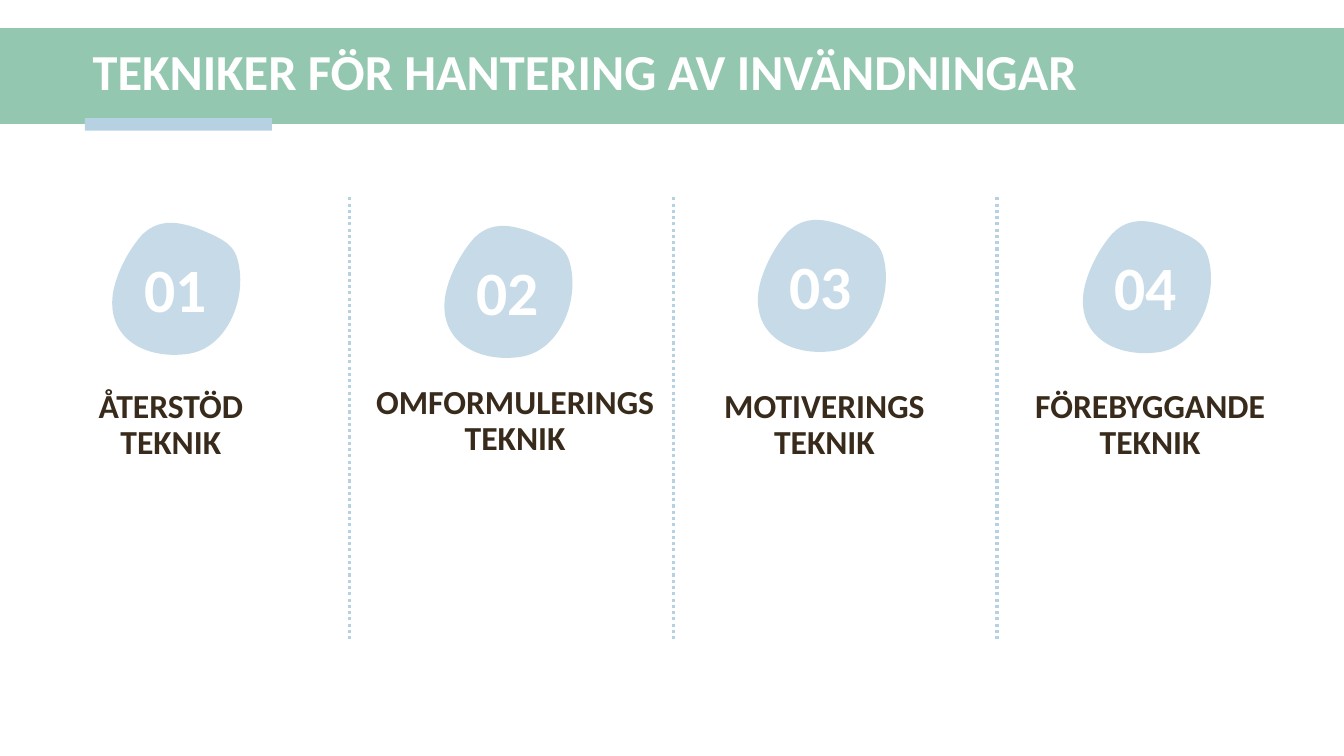
from dataclasses import dataclass

from lxml import etree
from pptx import Presentation
from pptx.dml.color import RGBColor
from pptx.enum.dml import MSO_LINE
from pptx.enum.shapes import MSO_CONNECTOR, MSO_SHAPE
from pptx.enum.text import MSO_ANCHOR, MSO_AUTO_SIZE, PP_ALIGN
from pptx.oxml.ns import qn
from pptx.util import Pt

RECTANGLE = MSO_SHAPE.RECTANGLE
STRAIGHT = MSO_CONNECTOR.STRAIGHT
DOTTED = MSO_LINE.ROUND_DOT
MIDDLE = MSO_ANCHOR.MIDDLE
NO_AUTOFIT = MSO_AUTO_SIZE.NONE
LEFT = PP_ALIGN.LEFT
CENTER = PP_ALIGN.CENTER


@dataclass(frozen=True)
class Theme:
    font: str = "Calibri"
    green: RGBColor = RGBColor(0x94, 0xC7, 0xB0)
    blue: RGBColor = RGBColor(0xB6, 0xD1, 0xE1)
    brown: RGBColor = RGBColor(0x38, 0x2B, 0x1B)
    white: RGBColor = RGBColor(0xFF, 0xFF, 0xFF)
    title_size: int = 36
    number_size: int = 44
    label_size: int = 24


THEME = Theme()

BLOB_SIZE = (91.4, 94.3)
BLOB_START = (55.4, 2.2)
BLOB_CURVES = [
    ((43.2, -1.4), (31, -1.4), (20.9, 9.4)),
    ((11.5, 20.2), (2.9, 36.7), (0.7, 51.1)),
    ((-3.6, 83.5), (25.2, 97.9), (54.7, 93.6)),
    ((83.5, 89.3), (97.9, 51.1), (89.3, 24.5)),
    ((86.4, 15.8), (79.2, 12.2), (72, 8.6)),
    ((67, 6.5), (61.2, 3.6), BLOB_START),
]
BLOB_OPACITY = 77

TECHNIQUES = [
    ("01", (79.9, 159.1), "ÅTERSTÖD\vTEKNIK", (16.9, 274.3, 210.2, 174.2)),
    ("02", (317.2, 161.3), "OMFORMULERINGS\vTEKNIK", (255.3, 271.4, 225.4, 177.1)),
    ("03", (541.1, 157), "MOTIVERINGS\vTEKNIK", (483.8, 274.3, 210.2, 174.2)),
    ("04", (773.3, 157.9), "FÖREBYGGANDE TEKNIK", (716.4, 274.3, 210.2, 174.2)),
]


def to_points(values):
    return [Pt(value) for value in values]


def write_text(shape, text, size, color, alignment, line_spacing):
    text_frame = shape.text_frame
    text_frame.word_wrap = True
    text_frame.auto_size = NO_AUTOFIT
    text_frame.text = text
    paragraph = text_frame.paragraphs[0]
    paragraph.alignment = alignment
    paragraph.line_spacing = line_spacing
    paragraph.space_before = Pt(0)
    for run in paragraph.runs:
        run.font.name = THEME.font
        run.font.size = Pt(size)
        run.font.bold = True
        run.font.color.rgb = color


def add_bar(slide, box, color):
    bar = slide.shapes.add_shape(RECTANGLE, *to_points(box))
    bar.shadow.inherit = False
    bar.fill.solid()
    bar.fill.fore_color.rgb = color
    bar.line.fill.background()
    return bar


def add_title(slide, text, box):
    title = slide.shapes.title
    title.left, title.top, title.width, title.height = to_points(box)
    write_text(title, text, THEME.title_size, THEME.white, LEFT, 0.9)
    title.text_frame.vertical_anchor = MIDDLE


def add_text(shapes, text, box, size, color, line_spacing):
    text_box = shapes.add_textbox(*to_points(box))
    write_text(text_box, text, size, color, CENTER, Pt(line_spacing))


def draw_curves(outline):
    width, height = to_points(BLOB_SIZE)
    outline.set("w", str(width))
    outline.set("h", str(height))
    for command in list(outline):
        outline.remove(command)
    commands = [("a:moveTo", [BLOB_START])]
    commands += [("a:cubicBezTo", curve) for curve in BLOB_CURVES]
    for tag, points in commands:
        command = etree.SubElement(outline, qn(tag))
        for x, y in points:
            etree.SubElement(command, qn("a:pt"), x=str(Pt(x)), y=str(Pt(y)))
    etree.SubElement(outline, qn("a:close"))


def add_blob(shapes, left, top):
    builder = shapes.build_freeform(*to_points(BLOB_START))
    builder.add_line_segments([to_points(curve[-1]) for curve in BLOB_CURVES])
    blob = builder.convert_to_shape()
    blob.left, blob.top = Pt(left), Pt(top)
    blob.width, blob.height = to_points(BLOB_SIZE)
    draw_curves(next(blob.element.iter(qn("a:path"))))
    blob.shadow.inherit = False
    blob.fill.solid()
    blob.fill.fore_color.rgb = THEME.blue
    blob.line.fill.background()
    color = blob.element.spPr.find(qn("a:solidFill"))[0]
    etree.SubElement(color, qn("a:alpha"), val=str(BLOB_OPACITY * 1000))


def add_badge(slide, number, left, top):
    badge = slide.shapes.add_group_shape()
    add_blob(badge.shapes, left, top)
    number_box = (left, top + 46, 90.7, 75.6)
    add_text(badge.shapes, number, number_box, THEME.number_size, THEME.white, 23.4)


def add_divider(slide, x, top, bottom):
    divider = slide.shapes.add_connector(STRAIGHT, *to_points((x, top, x, bottom)))
    divider.line.color.rgb = THEME.blue
    divider.line.width = Pt(2.25)
    divider.line.dash_style = DOTTED
    etree.SubElement(divider.element.spPr, qn("a:effectLst"))


def main():
    presentation = Presentation()
    presentation.slide_width = Pt(960)
    presentation.slide_height = Pt(540)
    slide = presentation.slides.add_slide(presentation.slide_layouts[5])

    add_title(slide, "TEKNIKER FÖR HANTERING AV INVÄNDNINGAR", (59, 24.5, 859, 56.9))
    for box, color in [
        ((0, 20.1, 960, 68.4), THEME.green),
        ((60.6, 84.4, 133.6, 9), THEME.blue),
    ]:
        bar = add_bar(slide, box, color)
        slide.shapes.title.element.addprevious(bar.element)

    for number, badge_position, label, label_box in TECHNIQUES:
        add_text(slide.shapes, label, label_box, THEME.label_size, THEME.brown, 25.8)
    for number, badge_position, label, label_box in TECHNIQUES:
        add_badge(slide, number, *badge_position)
    for index in range(len(TECHNIQUES) - 1):
        add_divider(slide, 249.8 + 231.2 * index, 140.9, 457)

    presentation.save("out.pptx")


if __name__ == "__main__":
    main()
